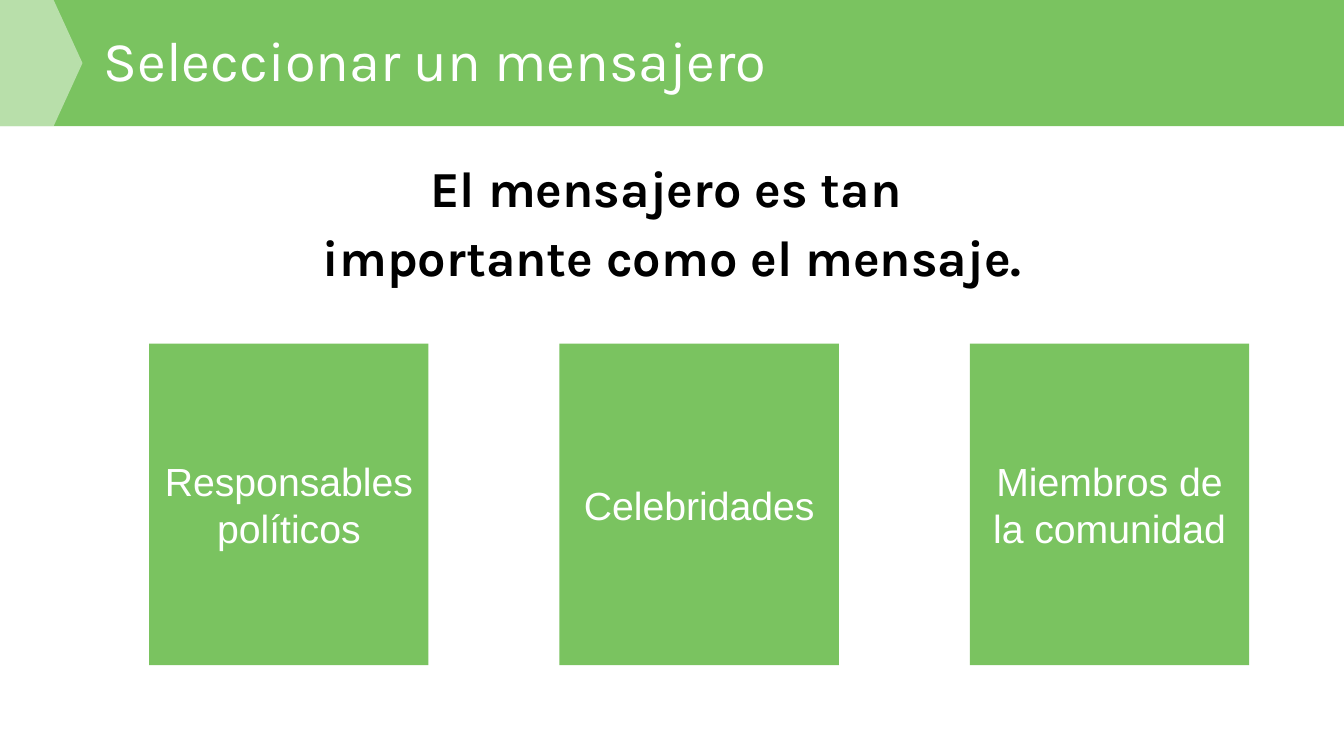
from pptx import Presentation
from pptx.dml.color import RGBColor as RGB
from pptx.enum.shapes import MSO_SHAPE as Kind
from pptx.enum.text import MSO_ANCHOR as Anchor, MSO_AUTO_SIZE as Auto, PP_ALIGN as Align
from pptx.oxml.ns import qn
from pptx.util import Cm, Pt
from lxml.etree import SubElement as Sub

GREEN, WHITE, BLACK = "7AC360", "FFFFFF", "000000"


def style(para, align, color, **look):
    para.alignment = align
    for name, value in look.items():
        setattr(para.font, name, value)
    para.font.color.rgb = RGB.from_string(color)


def block(kind, box, color):
    shape = slide.shapes.add_shape(kind, *map(Cm, box))
    shape.shadow.inherit = False
    shape.fill.solid()
    shape.fill.fore_color.rgb = RGB.from_string(color)
    shape.line.fill.background()
    return shape


deck = Presentation()
deck.slide_width, deck.slide_height = Cm(33.87), Cm(19.05)
slide = deck.slides.add_slide(deck.slide_layouts[1])
title, body = slide.placeholders

# Header band with pale arrow, behind the title
band = block(Kind.RECTANGLE, (0, 0, 33.87, 3.18), GREEN)
arrow = block(Kind.PENTAGON, (0, 0, 2.08, 3.18), WHITE)
arrow.adjustments[0] = 0.35
tint = arrow.fill._xPr.find(".//" + qn("a:srgbClr"))
Sub(tint, qn("a:alpha"), val="47000")
for spot, part in enumerate((band, arrow), 2):
    slide.shapes._spTree.insert(spot, part._element)

# Title and body frames
frames = [
    (title, (2.36, 0.51, 26.87, 2.18), Anchor.MIDDLE),
    (body, (2.34, 4.01, 29.21, 13.13), Anchor.TOP),
]
for holder, box, anchor in frames:
    holder.left, holder.top, holder.width, holder.height = map(Cm, box)
    text = holder.text_frame
    text.auto_size, text.word_wrap = Auto.NONE, True
    text.vertical_anchor = anchor

# Title
title.text_frame.text = "Seleccionar un mensajero"
head = title.text_frame.paragraphs[0]
head.line_spacing = 0.9
style(head, Align.LEFT, WHITE, name="Karla", size=Pt(40))

# Key message
body.text_frame.text = "El mensajero es tan \nimportante como el mensaje."
for row, para in enumerate(body.text_frame.paragraphs):
    props = para._p.get_or_add_pPr()
    props.set("marL", "0")
    props.set("indent", "0")
    Sub(props, qn("a:buNone"))
    para.line_spacing = 0.9
    para.space_before = Pt(10 if row else 0)
    style(para, Align.CENTER, BLACK, name="Karla", size=Pt(36), bold=True)

# Messenger cards
cards = ["Responsables políticos", "Celebridades", "Miembros de la comunidad"]
for col, label in enumerate(cards):
    card = block(Kind.RECTANGLE, (3.76 + 10.34 * col, 8.66, 7.04, 8.1), GREEN)
    text = card.text_frame
    text.word_wrap, text.vertical_anchor = True, Anchor.MIDDLE
    text.text = label
    style(text.paragraphs[0], Align.CENTER, WHITE, name="Arial", size=Pt(28))

deck.save("out.pptx")
